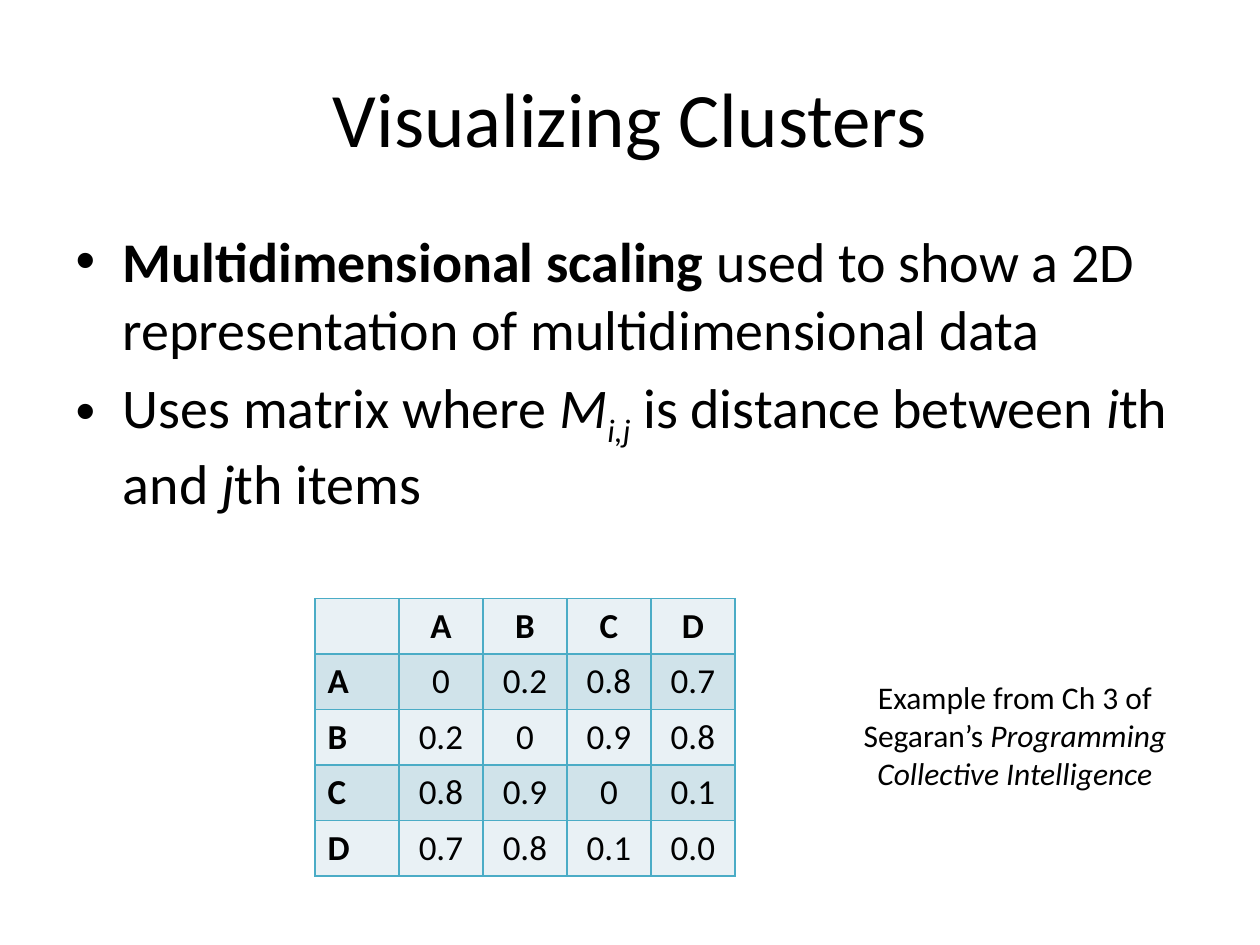
from lxml.etree import SubElement
from pptx import Presentation
from pptx.dml.color import RGBColor
from pptx.enum.text import MSO_ANCHOR, PP_ALIGN
from pptx.oxml.ns import qn
from pptx.util import Pt

BLACK = "000000"
BORDER = "4BACC6"
LIGHT_ROW = "E9F1F5"
DARK_ROW = "D0E3EA"


def color(value):
    return RGBColor.from_string(value)


class SlideBuilder:
    font_name = "Calibri"

    def __init__(self, presentation):
        self.slide = presentation.slides.add_slide(presentation.slide_layouts[1])

    def place(self, shape, left, top, width, height):
        shape.left, shape.top = Pt(left), Pt(top)
        shape.width, shape.height = Pt(width), Pt(height)

    def add_runs(self, paragraph, runs, size):
        """Add (text, style) pairs; style letters: b bold, i italic, s subscript."""
        for text, style in runs:
            run = paragraph.add_run()
            run.text = text
            run.font.name = self.font_name
            run.font.size = Pt(size)
            run.font.color.rgb = color(BLACK)
            run.font.bold = "b" in style
            run.font.italic = "i" in style
            if "s" in style:
                run._r.get_or_add_rPr().set("baseline", "-25000")

    def title(self, text, box):
        shape = self.slide.shapes.title
        self.place(shape, *box)
        shape.text_frame.vertical_anchor = MSO_ANCHOR.MIDDLE
        paragraph = shape.text_frame.paragraphs[0]
        paragraph.alignment = PP_ALIGN.CENTER
        self.add_runs(paragraph, [(text, "")], 44)

    def bullets(self, items, box):
        shape = self.slide.placeholders[1]
        self.place(shape, *box)
        frame = shape.text_frame
        for index, runs in enumerate(items):
            paragraph = frame.add_paragraph() if index else frame.paragraphs[0]
            self.add_runs(paragraph, runs, 32)

    def caption(self, runs, box):
        shape = self.slide.shapes.add_textbox(*map(Pt, box))
        shape.text_frame.word_wrap = True
        paragraph = shape.text_frame.paragraphs[0]
        paragraph.alignment = PP_ALIGN.CENTER
        self.add_runs(paragraph, runs, 18)

    def cell_borders(self, cell):
        properties = cell._tc.get_or_add_tcPr()
        for index, side in enumerate(("lnL", "lnR", "lnT", "lnB")):
            line = properties.makeelement(qn(f"a:{side}"), {"w": str(Pt(1))})
            fill = SubElement(line, qn("a:solidFill"))
            SubElement(fill, qn("a:srgbClr"), {"val": BORDER})
            properties.insert(index, line)

    def matrix(self, labels, values, left, top, column_width, row_height):
        """Add a table whose rows and columns carry the same labels."""
        rows = [["", *labels]] + [[label, *row] for label, row in zip(labels, values)]
        count = len(rows)
        table = self.slide.shapes.add_table(
            count, count, Pt(left), Pt(top),
            Pt(column_width * count), Pt(row_height * count)).table
        for row_index, row in enumerate(rows):
            table.rows[row_index].height = Pt(row_height)
            for column_index, text in enumerate(row):
                cell = table.cell(row_index, column_index)
                cell.fill.solid()
                cell.fill.fore_color.rgb = color(DARK_ROW if row_index % 2 else LIGHT_ROW)
                self.cell_borders(cell)
                if not text:
                    continue
                paragraph = cell.text_frame.paragraphs[0]
                paragraph.alignment = PP_ALIGN.CENTER if column_index else PP_ALIGN.LEFT
                is_label = row_index == 0 or column_index == 0
                self.add_runs(paragraph, [(text, "b" if is_label else "")], 20)


def main():
    presentation = Presentation()
    presentation.slide_width, presentation.slide_height = Pt(720), Pt(540)
    builder = SlideBuilder(presentation)
    builder.title("Visualizing Clusters", (36, 21.6, 648, 90))
    builder.bullets([
        [("Multidimensional scaling", "b"),
         (" used to show a 2D representation of multidimensional data", "")],
        [("Uses matrix where ", ""), ("M", "i"), ("i,j", "is"),
         (" is distance between ", ""), ("i", "i"), ("th and ", ""),
         ("j", "i"), ("th items", "")],
    ], (36, 126, 648, 356.4))
    distances = [
        ["0", "0.2", "0.8", "0.7"],
        ["0.2", "0", "0.9", "0.8"],
        ["0.8", "0.9", "0", "0.1"],
        ["0.7", "0.8", "0.1", "0.0"],
    ]
    builder.matrix("ABCD", distances, 180, 342, 48, 31.2)
    builder.caption([
        ("Example from Ch 3 of Segaran’s ", ""),
        ("Programming Collective Intelligence", "i"),
    ], (486, 384, 188, 72))
    presentation.save("out.pptx")


if __name__ == "__main__":
    main()
